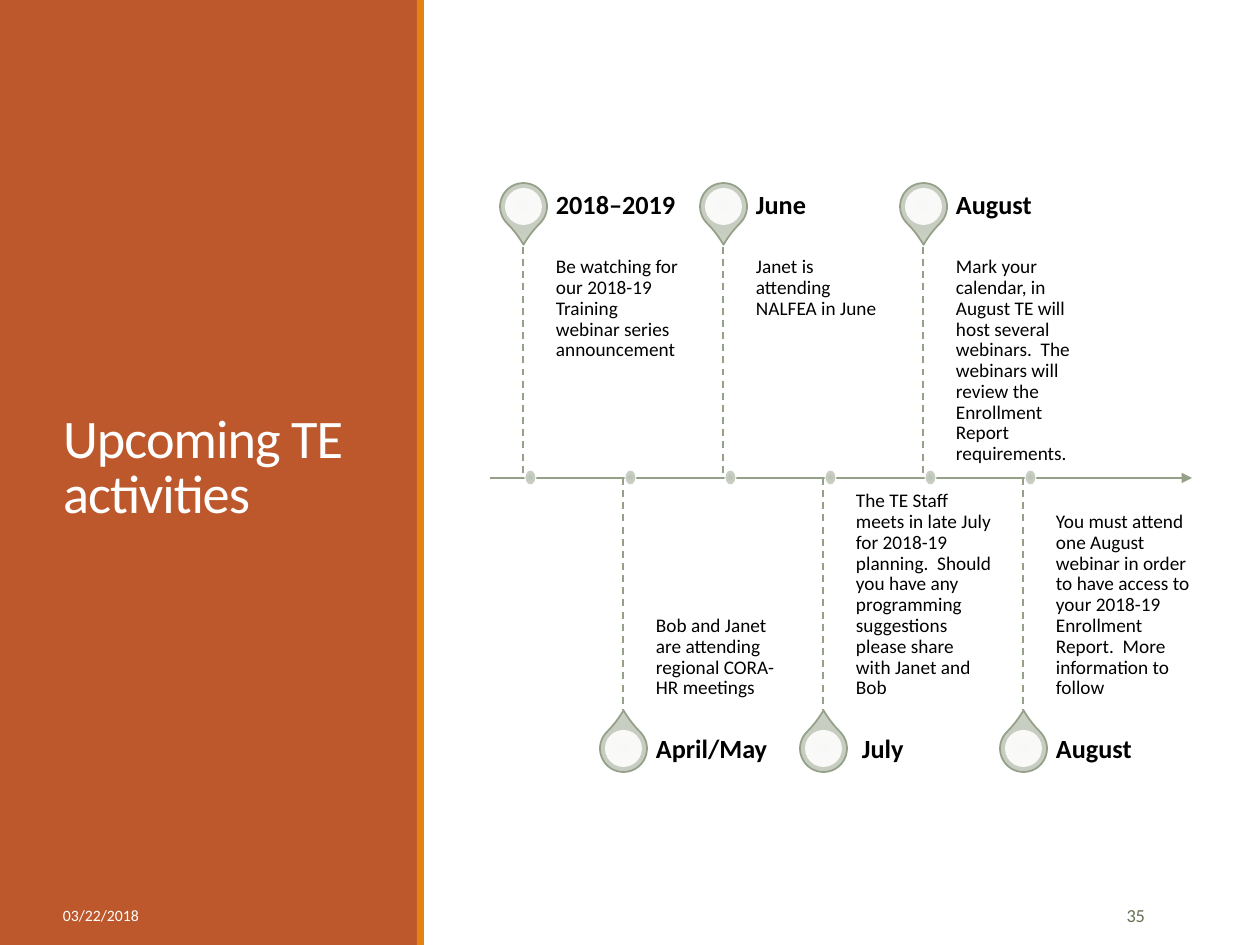
from dataclasses import dataclass

from pptx import Presentation
from pptx.dml.color import RGBColor
from pptx.enum.dml import MSO_LINE_DASH_STYLE as Dash
from pptx.enum.shapes import MSO_CONNECTOR as Connector, MSO_SHAPE as Shape
from pptx.enum.text import MSO_ANCHOR as Anchor, PP_ALIGN as Align
from pptx.oxml import parse_xml
from pptx.oxml.ns import nsdecls
from pptx.util import Pt
from lxml.etree import SubElement

PX = 914400 / 126


@dataclass(frozen=True)
class Theme:
    font: str = "Calibri"
    rust: str = "BD582C"
    orange: str = "E48312"
    white: str = "FFFFFF"
    black: str = "000000"
    sage: str = "94A088"
    page_number: str = "637052"
    sage_stops: tuple = ((0, "BBC3B5"), (45, "C7CDC1"), (100, "CDD4C7"))
    title_size: float = 31
    heading_size: float = 15
    body_size: float = 11
    date_size: float = 9
    number_size: float = 10.5


theme = Theme()
deck = Presentation()
deck.slide_width, deck.slide_height = round(1260 * PX), round(945 * PX)
page = deck.slides.add_slide(deck.slide_layouts[6])


def add_text(text, at, size, color=theme.black, bold=False, anchor=Anchor.MIDDLE,
             align=Align.LEFT, insets=(13, 6, 13, 6), spacing=1.0, tracking=None):
    """Insets run left, top, right, bottom in px; tracking is in 1/100 pt."""
    box = page.shapes.add_textbox(*(round(value * PX) for value in at))
    frame = box.text_frame
    frame.word_wrap = True
    frame.vertical_anchor = anchor
    (frame.margin_left, frame.margin_top, frame.margin_right,
     frame.margin_bottom) = (round(value * PX) for value in insets)
    para = frame.paragraphs[0]
    para.alignment = align
    para.line_spacing = spacing
    span = para.add_run()
    span.text = text
    span.font.name = theme.font
    span.font.size = Pt(size)
    span.font.bold = bold
    span.font.color.rgb = RGBColor.from_string(color)
    if tracking is not None:
        span.font._element.set("spc", str(tracking))


def add_filled(kind, at, fill, line=None, width=1.0, alpha=None):
    """Fill is one colour, or (percent, colour) stops for a radial gradient."""
    shape = page.shapes.add_shape(kind, *(round(value * PX) for value in at))
    shape.shadow.inherit = False
    if isinstance(fill, str):
        shape.fill.solid()
        shape.fill.fore_color.rgb = RGBColor.from_string(fill)
        if alpha is not None:
            color = shape.fill._xPr.solidFill[0]
            SubElement(color, color.tag.replace("srgbClr", "alpha"), val=str(alpha * 1000))
    else:
        stops = "".join(f'<a:gs pos="{pos * 1000}"><a:srgbClr val="{color}"/></a:gs>'
                        for pos, color in fill)
        shape._element.spPr.prstGeom.addnext(parse_xml(
            f'<a:gradFill {nsdecls("a")} rotWithShape="1"><a:gsLst>{stops}</a:gsLst>'
            '<a:path path="circle"><a:fillToRect l="100000" t="100000" r="100000" '
            'b="100000"/></a:path></a:gradFill>'))
    if line:
        shape.line.color.rgb = RGBColor.from_string(line)
        shape.line.width = Pt(width)
    else:
        shape.line.fill.background()
    return shape


# Side panel
add_filled(Shape.RECTANGLE, (0, 0, 418, 945), theme.rust)
add_filled(Shape.RECTANGLE, (417, 0, 7, 945), theme.orange)
add_text("Upcoming TE activities", (50, 72, 319, 795), theme.title_size, theme.white,
         spacing=0.85, tracking=-50)

# Timeline: events alternate above and below the axis
AXIS_Y, STEM, STEP = 478, 231, 100
HEADING_HEIGHT, TEXT_WIDTH, PIN, HOLE = 81, 137, 47, 37
events = [
    ("2018–2019", "Be watching for our 2018-19 Training webinar series announcement"),
    ("April/May", "Bob and Janet are attending regional CORA-HR meetings"),
    ("June", "Janet is attending NALFEA in June"),
    (" July", "The TE Staff meets in late July for 2018-19 planning.  Should you have any "
              "programming suggestions please share with Janet and Bob"),
    ("August", "Mark your calendar, in August TE will host several webinars.  The webinars "
               "will review the Enrollment Report requirements."),
    ("August", "You must attend one August webinar in order to have access to your 2018-19 "
               "Enrollment Report.  More information to follow"),
]

axis = page.shapes.add_connector(Connector.STRAIGHT, *(
    round(value * PX) for value in (490, AXIS_Y, 1192, AXIS_Y)))
axis.line.width = Pt(1.5)
connectors = [axis]

for index, (heading, body) in enumerate(events):
    above = index % 2 == 0
    left = 500 + index * STEP
    text_left = left + 56
    if above:
        pin_top, rotation = 183, 135
        body_top = AXIS_Y - STEM
        heading_top = body_top - HEADING_HEIGHT
        body_anchor, body_insets = Anchor.TOP, (0, 10, 10, 14)
    else:
        pin_top, rotation = 725, 315
        body_top = AXIS_Y
        heading_top = AXIS_Y + STEM
        body_anchor, body_insets = Anchor.BOTTOM, (0, 14, 0, 10)

    pin = add_filled(Shape.TEAR, (left, pin_top, PIN, PIN), theme.sage_stops, theme.sage)
    pin.adjustments[0] = 1.15
    pin.rotation = rotation
    add_filled(Shape.OVAL, (left + 5, pin_top + 5, HOLE, HOLE), theme.white, alpha=90)
    add_text(body, (text_left, body_top, TEXT_WIDTH, STEM), theme.body_size,
             anchor=body_anchor, insets=body_insets, spacing=0.9)
    add_text(heading, (text_left, heading_top, TEXT_WIDTH, HEADING_HEIGHT),
             theme.heading_size, bold=True, insets=(0, 0, 13, 0), spacing=0.9)

    stem_x = left + 23
    stem = page.shapes.add_connector(Connector.STRAIGHT, *(
        round(value * PX) for value in (stem_x, body_top, stem_x, body_top + STEM)))
    stem.line.width = Pt(1)
    stem.line.dash_style = Dash.DASH
    connectors.append(stem)
    add_filled(Shape.OVAL, (left + 25, AXIS_Y - 8, 11, 15), theme.sage_stops,
               theme.white, width=0.5)

for connector in connectors:
    connector.line.color.rgb = RGBColor.from_string(theme.sage)
    connector._element.spPr.append(parse_xml(f'<a:effectLst {nsdecls("a")}/>'))
axis.line._get_or_add_ln().append(parse_xml(f'<a:tailEnd {nsdecls("a")} type="triangle"/>'))

# Footer
add_text("03/22/2018", (50, 890, 179, 50), theme.date_size, theme.white)
add_text("35", (1046, 890, 112, 50), theme.number_size, theme.page_number, align=Align.RIGHT)

deck.save("out.pptx")
